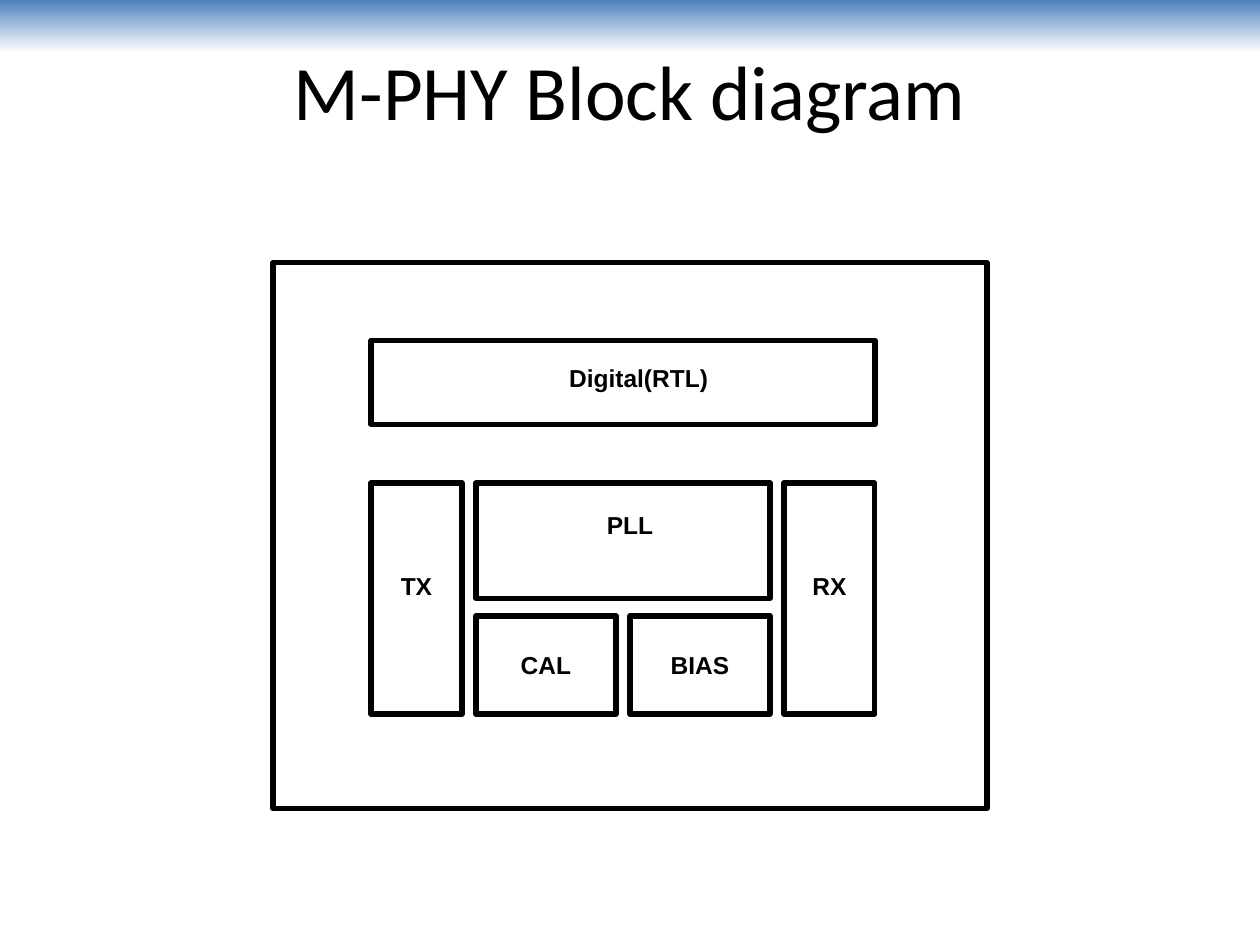
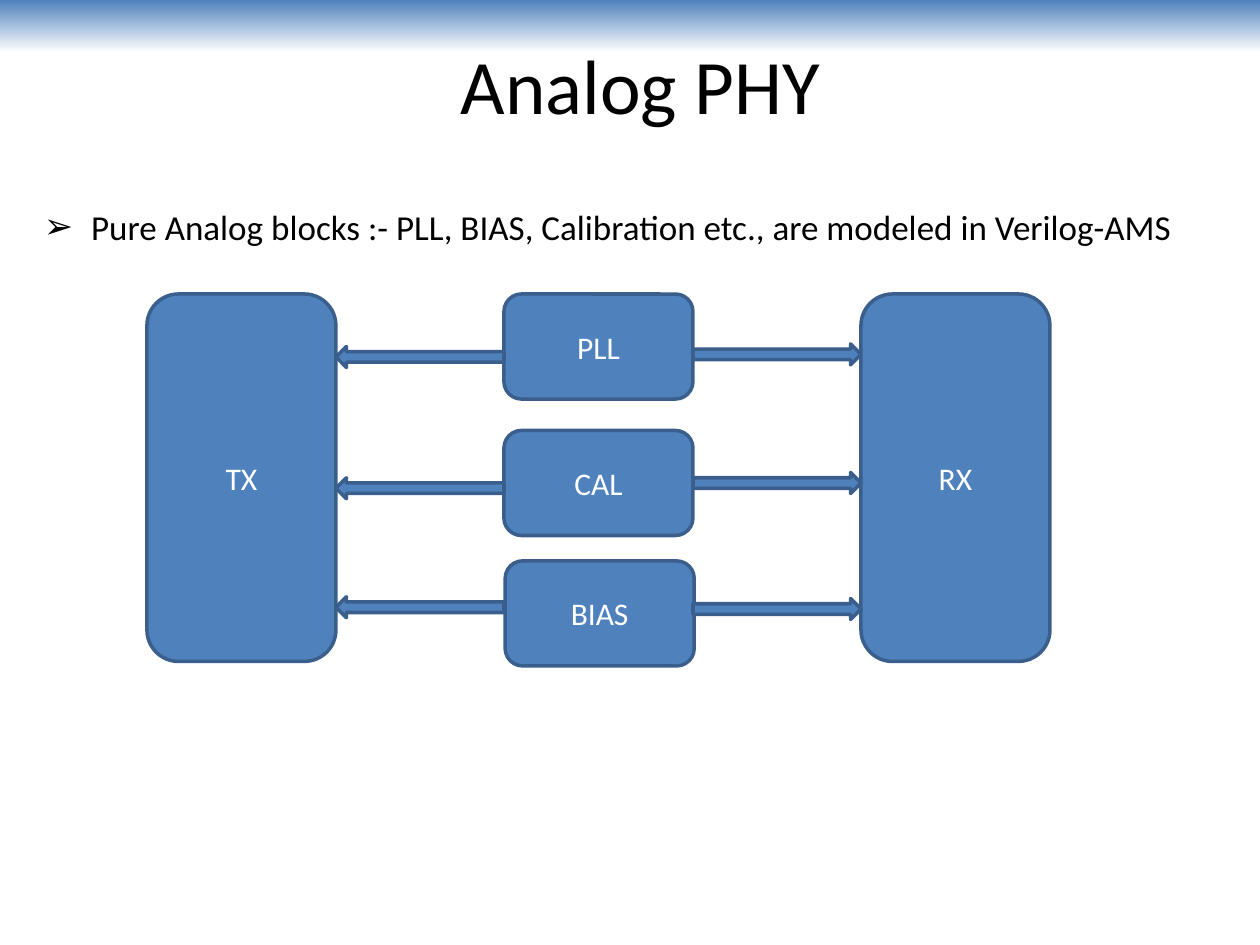
"""Build two slides that show the blocks of an M-PHY and of its analog part."""
from dataclasses import dataclass
from lxml import etree
from pptx import Presentation
from pptx import util as u
from pptx.dml.color import RGBColor
from pptx.enum import shapes, text
from pptx.oxml.ns import qn


@dataclass(frozen=True)
class Theme:
    blue: RGBColor = RGBColor(0x4F, 0x81, 0xBD)
    edge: RGBColor = RGBColor(0x3A, 0x5F, 0x8C)
    black: RGBColor = RGBColor(0, 0, 0)
    white: RGBColor = RGBColor(255, 255, 255)
    body_font: str = "Calibri"
    label_font: str = "Arial"
    title_size: int = 44
    body_size: int = 20
    block_size: int = 18
    label_size: int = 14


theme = Theme()
Preset = shapes.MSO_SHAPE


def add_box(parent, preset, bounds, fill, line, line_width):
    """Add a preset shape; a fill of None leaves it hollow."""
    shape = parent.shapes.add_shape(preset, *[u.Pt(value) for value in bounds])
    shape.shadow.inherit = False
    if fill is None:
        shape.fill.background()
    else:
        shape.fill.solid()
        shape.fill.fore_color.rgb = fill
    shape.line.color.rgb = line
    shape.line.width = u.Pt(line_width)
    return shape


def write(shape, words, font_name, size, color, bold=False, align=text.PP_ALIGN.CENTER):
    """Put one formatted paragraph into a shape."""
    shape.text_frame.word_wrap = True
    shape.text_frame.text = words
    paragraph = shape.text_frame.paragraphs[0]
    paragraph.alignment = align
    font = paragraph.runs[0].font
    font.name, font.size, font.bold = font_name, u.Pt(size), bold
    font.color.rgb = color
    return paragraph


presentation = Presentation()
presentation.slide_width, presentation.slide_height = u.Pt(720), u.Pt(540)

titles = [
    ("M-PHY Block diagram", (36, 12, 648, 78)),
    ("Analog PHY", (42, 18, 648, 60)),
]
for words, bounds in titles:
    slide = presentation.slides.add_slide(presentation.slide_layouts[5])
    title = slide.shapes.title
    title.left, title.top, title.width, title.height = [u.Pt(value) for value in bounds]
    title.text_frame.vertical_anchor = text.MSO_ANCHOR.MIDDLE
    write(title, words, theme.body_font, theme.title_size, theme.black)
block_slide, analog_slide = presentation.slides

band = add_box(block_slide, Preset.RECTANGLE, (0, 0, 720, 30), theme.blue, theme.blue, 1)
band.line.fill.background()
band.fill.gradient()
band.fill.gradient_angle = 270
for stop, color in zip(band.fill.gradient_stops, (theme.blue, theme.white)):
    stop.color.rgb = color
presentation.slide_master.element.cSld.spTree.insert(2, band.element)

diagram = block_slide.shapes.add_group_shape()
label_width, label_height = 144, 24.5
circuit_blocks = [
    ("TX", (212, 276, 52, 132), 238, 322.5),
    ("RX", (448, 276, 52, 132), 474, 322.5),
    ("PLL", (272, 276, 168, 66), 360, 288),
    ("Digital(RTL)", (212, 194.5, 288, 48), 365, 204),
    ("CAL", (272, 352, 80, 56), 312, 368),
    ("BIAS", (360, 352, 80, 56), 400, 368),
]
for words, bounds, label_center, label_top in circuit_blocks:
    add_box(diagram, Preset.RECTANGLE, bounds, theme.white, theme.black, 3)
    label = diagram.shapes.add_textbox(
        u.Pt(label_center - label_width / 2), u.Pt(label_top), u.Pt(label_width), u.Pt(label_height))
    write(label, words, theme.label_font, theme.label_size, theme.black, bold=True)
add_box(diagram, Preset.RECTANGLE, (156, 150, 408, 312), None, theme.black, 3)

statement = analog_slide.shapes.add_textbox(u.Pt(18), u.Pt(114), u.Pt(666), u.Pt(330))
paragraph = write(
    statement, "Pure Analog blocks :- PLL, BIAS, Calibration etc., are modeled in Verilog-AMS",
    theme.body_font, theme.body_size, theme.black, align=text.PP_ALIGN.LEFT)
properties = paragraph._p.get_or_add_pPr()
properties.set("marL", str(u.Pt(27)))
properties.set("indent", str(u.Pt(-27)))
etree.SubElement(properties, qn("a:buFont")).set("typeface", theme.label_font)
etree.SubElement(properties, qn("a:buChar")).set("char", "➢")

analog_group = analog_slide.shapes.add_group_shape()
block_width, tall, short = 108, 210, 60
tx_left, middle_left, rx_left = 84, 288, 492
analog_blocks = [
    ("TX", tx_left, 168, tall),
    ("CAL", middle_left, 246, short),
    ("PLL", middle_left, 168, short),
    ("RX", rx_left, 168, tall),
    ("BIAS", middle_left + 0.7, 320.5, short),
]
for words, left, top, height in analog_blocks:
    block = add_box(analog_group, Preset.ROUNDED_RECTANGLE, (left, top, block_width, height),
                    theme.blue, theme.edge, 2)
    block.text_frame.vertical_anchor = text.MSO_ANCHOR.MIDDLE
    write(block, words, theme.body_font, theme.block_size, theme.white)

arrow_columns = [
    (tx_left + block_width, 0, (198, 273, 341)),
    (middle_left + block_width, 180, (196.5, 270, 342)),
]
for left, rotation, tops in arrow_columns:
    for top in tops:
        arrow = add_box(analog_slide, Preset.LEFT_ARROW, (left, top, 96, 12), theme.blue, theme.edge, 2)
        arrow.rotation = rotation

presentation.save("out.pptx")
